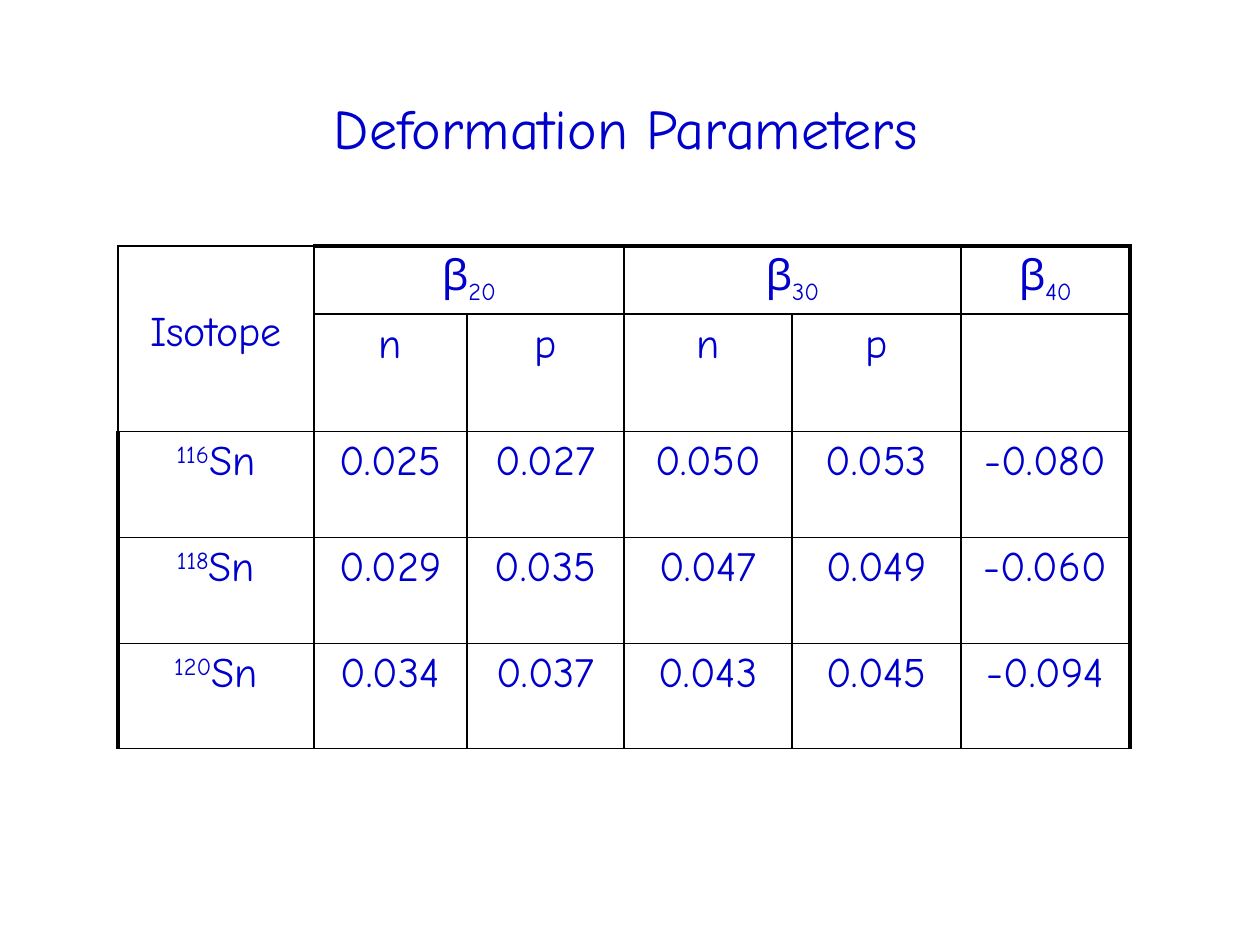
from typing import NamedTuple

from pptx import Presentation
from pptx import util as u
from pptx.enum import text
from pptx.dml.color import RGBColor
from pptx.oxml.ns import qn
from lxml import etree

EMU_PER_PX = 914400 / 126
FONT = "Comic Neue"
COLORS = {"text": "0000CC", "border": "000000"}
THIN, THICK = 1, 2.25
SUB, SUPER = -25000, 30000

COL_WIDTHS = [196, 153, 157, 168, 169, 169]
ROW_HEIGHTS = [68, 117, 106, 106, 105]
ISOTOPE_TOP = 63  # top margin of the two-row heading


class Run(NamedTuple):
    text: str
    baseline: int = 0


class Isotope(NamedTuple):
    mass: str
    values: list[str]


ISOTOPES = [
    Isotope("116", ["0.025", "0.027", "0.050", "0.053", "-0.080"]),
    Isotope("118", ["0.029", "0.035", "0.047", "0.049", "-0.060"]),
    Isotope("120", ["0.034", "0.037", "0.043", "0.045", "-0.094"]),
]
BETAS = {1: "20", 3: "30", 5: "40"}


def px(n: int) -> u.Emu:
    return u.Emu(round(n * EMU_PER_PX))


def style_paragraph(p, size: int) -> None:
    p.alignment = text.PP_ALIGN.CENTER
    p.font.name = FONT
    p.font.size = u.Pt(size)
    p.font.bold = False
    p.font.color.rgb = RGBColor.from_string(COLORS["text"])


def write_cell(cell, runs: list[Run]) -> None:
    p = cell.text_frame.paragraphs[0]
    style_paragraph(p, 24)
    before = etree.Element(qn("a:spcBef"))
    etree.SubElement(before, qn("a:spcPct"), val="20000")
    p._p.get_or_add_pPr().insert(0, before)
    for run in runs:
        r = p.add_run()
        r.text = run.text
        if run.baseline:
            r._r.get_or_add_rPr().set("baseline", str(run.baseline))


def set_borders(cell, widths: dict[str, float]) -> None:
    """Draw the sides L, R, T and B, in the order the schema asks for."""
    tcPr = cell._tc.get_or_add_tcPr()
    for side in "LRTB":
        ln = etree.SubElement(tcPr, qn(f"a:ln{side}"), w=str(u.Pt(widths.get(side, THIN))))
        fill = etree.SubElement(ln, qn("a:solidFill"))
        etree.SubElement(fill, qn("a:srgbClr"), val=COLORS["border"])


def add_title(slide, title: str) -> None:
    sp = slide.shapes.title
    sp.left, sp.top, sp.width, sp.height = px(59), px(49), px(1134), px(157)
    tf = sp.text_frame
    tf.text = title
    tf.vertical_anchor = text.MSO_ANCHOR.MIDDLE
    style_paragraph(tf.paragraphs[0], 32)


def add_parameter_table(slide) -> None:
    n_rows, n_cols = len(ROW_HEIGHTS), len(COL_WIDTHS)
    table = slide.shapes.add_table(
        n_rows, n_cols, px(118), px(246), px(sum(COL_WIDTHS)), px(sum(ROW_HEIGHTS))
    ).table
    table.first_row = table.horz_banding = False
    for col, width in zip(table.columns, COL_WIDTHS):
        col.width = px(width)
    for row, height in zip(table.rows, ROW_HEIGHTS):
        row.height = px(height)

    for i in range(n_rows):
        for j in range(n_cols):
            widths = {}
            if i == 0 and j > 0:
                widths["T"] = THICK
            if j == 0 and i > 1:
                widths["L"] = THICK
            if j == n_cols - 1:
                widths["R"] = THICK
            set_borders(table.cell(i, j), widths)
            table.cell(i, j).fill.background()

    heading = table.cell(0, 0)
    heading.merge(table.cell(1, 0))
    heading.margin_top = px(ISOTOPE_TOP)
    write_cell(heading, [Run("Isotope")])
    for j, index in BETAS.items():
        if j < n_cols - 1:
            table.cell(0, j).merge(table.cell(0, j + 1))
        write_cell(table.cell(0, j), [Run("β"), Run(index, SUB)])
    for j, particle in enumerate("npnp", start=1):
        write_cell(table.cell(1, j), [Run(particle)])
    for i, isotope in enumerate(ISOTOPES, start=2):
        write_cell(table.cell(i, 0), [Run(isotope.mass, SUPER), Run("Sn")])
        for j, value in enumerate(isotope.values, start=1):
            write_cell(table.cell(i, j), [Run(value)])


def main() -> None:
    prs = Presentation()
    prs.slide_width, prs.slide_height = px(1260), px(945)
    slide = prs.slides.add_slide(prs.slide_layouts[5])
    add_title(slide, "Deformation Parameters")
    add_parameter_table(slide)
    prs.save("out.pptx")


if __name__ == "__main__":
    main()
